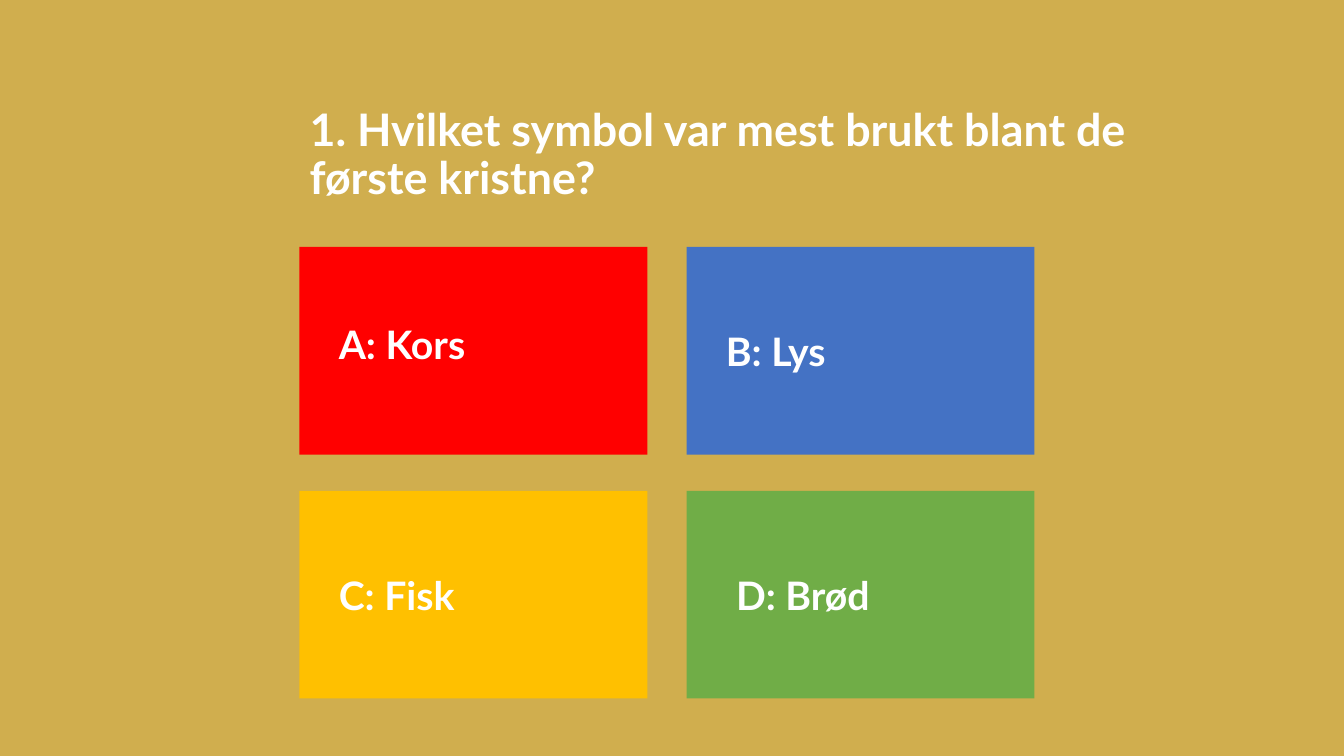
from pptx import Presentation
from pptx.dml.color import RGBColor
from pptx.enum.shapes import MSO_SHAPE
from pptx.enum.text import MSO_ANCHOR, MSO_AUTO_SIZE, PP_ALIGN
from pptx.util import Inches, Pt

# Content: text, fill, extra left inset, extra bottom inset
QUESTION = "1. Hvilket symbol var mest brukt blant de første kristne?"
ANSWERS = [
    ("A: Kors", "FF0000", 0, 0.14),
    ("B: Lys", "4472C4", 0, 0),
    ("C: Fisk", "FFC000", 0, 0),
    ("D: Brød", "70AD47", 0.1, 0),
]
BACKGROUND = "D0AE4E"
WHITE = "FFFFFF"

# Answer grid, in inches
LEFT, TOP = 2.97, 2.45
WIDTH, HEIGHT = 3.45, 2.06
COLUMN_STEP, ROW_STEP = 3.84, 2.42
INSET = 0.39


def paint(fill, color):
    fill.solid()
    fill.fore_color.rgb = RGBColor.from_string(color)


def write(text_frame, text, size):
    text_frame.text = text
    text_frame.word_wrap = True
    text_frame.auto_size = MSO_AUTO_SIZE.NONE
    paragraph = text_frame.paragraphs[0]
    paragraph.alignment = PP_ALIGN.LEFT
    font = paragraph.runs[0].font
    font.name = "Lato"
    font.size = Pt(size)
    font.bold = True
    font.color.rgb = RGBColor.from_string(WHITE)
    return paragraph


presentation = Presentation()
presentation.slide_width = Inches(13.33)
presentation.slide_height = Inches(7.5)
slide = presentation.slides.add_slide(presentation.slide_layouts[5])
paint(slide.background.fill, BACKGROUND)

# Question
title = slide.shapes.title
title.left, title.top = Inches(LEFT), Inches(1.03)
title.width, title.height = Inches(8.69), Inches(1.05)
title.text_frame.vertical_anchor = MSO_ANCHOR.BOTTOM
write(title.text_frame, QUESTION, 32).line_spacing = 0.9

# Answer boxes, two per row
for index, (answer, color, extra_left, extra_bottom) in enumerate(ANSWERS):
    row, column = divmod(index, 2)
    shape = slide.shapes.add_shape(
        MSO_SHAPE.RECTANGLE,
        Inches(LEFT + column * COLUMN_STEP), Inches(TOP + row * ROW_STEP),
        Inches(WIDTH), Inches(HEIGHT))
    shape.shadow.inherit = False
    shape.line.fill.background()
    paint(shape.fill, color)
    text_frame = shape.text_frame
    text_frame.vertical_anchor = MSO_ANCHOR.MIDDLE
    text_frame.margin_top = text_frame.margin_right = Inches(INSET)
    text_frame.margin_left = Inches(INSET + extra_left)
    text_frame.margin_bottom = Inches(INSET + extra_bottom)
    write(text_frame, answer, 28)

presentation.save("out.pptx")
